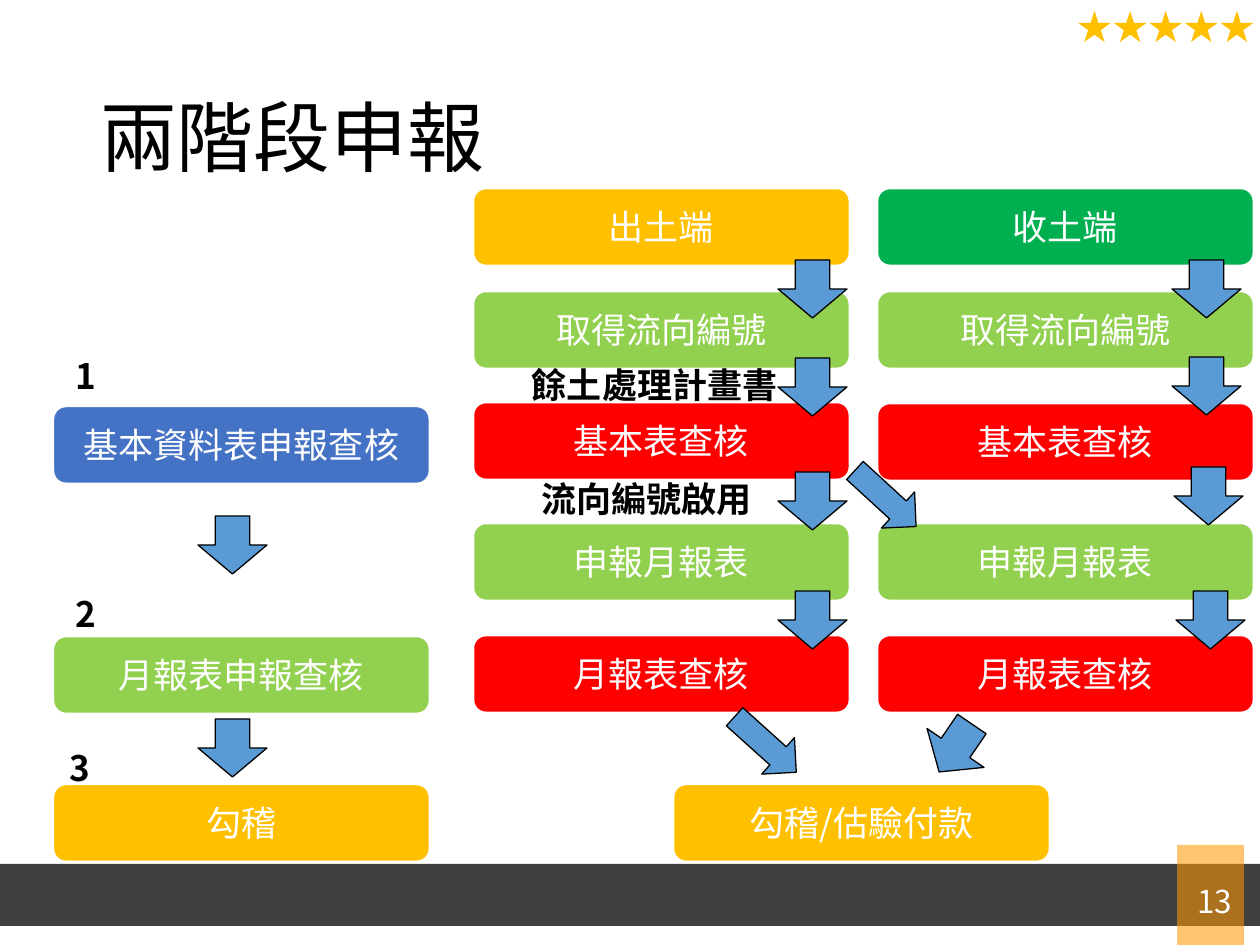
"""Build the slide on two-stage reporting as a flow of boxes and arrows."""
from lxml import etree
from pptx import Presentation
from pptx.dml.color import RGBColor
from pptx.enum.shapes import MSO_SHAPE
from pptx.enum.text import MSO_ANCHOR, MSO_AUTO_SIZE, PP_ALIGN
from pptx.oxml.ns import qn
from pptx.util import Pt

RECT, ROUND = MSO_SHAPE.RECTANGLE, MSO_SHAPE.ROUNDED_RECTANGLE
DOWN, STAR = MSO_SHAPE.DOWN_ARROW, MSO_SHAPE.STAR_5_POINT
LEFT, MID, RIGHT = PP_ALIGN.LEFT, PP_ALIGN.CENTER, PP_ALIGN.RIGHT
CENTER, TOP = MSO_ANCHOR.MIDDLE, MSO_ANCHOR.TOP
FIXED, GROW = MSO_AUTO_SIZE.NONE, MSO_AUTO_SIZE.SHAPE_TO_FIT_TEXT

WHITE = RGBColor(0xFF, 0xFF, 0xFF)
BLACK = RGBColor(0x00, 0x00, 0x00)
GRAY = RGBColor(0x40, 0x40, 0x40)
ORANGE = RGBColor(0xFF, 0x99, 0x00)
BLUE = RGBColor(0x44, 0x72, 0xC4)
SKY = RGBColor(0x5B, 0x9B, 0xD5)
LIME = RGBColor(0x92, 0xD0, 0x50)
GREEN = RGBColor(0x00, 0xB0, 0x50)
GOLD = RGBColor(0xFF, 0xC0, 0x00)
RED = RGBColor(0xFF, 0x00, 0x00)

FONT = "Noto Sans CJK JP"
SCALE = 914400 / 126
BOX = (377, 78)
ARROW = (69, 58)
SLANT = (49, 83)

TITLE = "兩階段申報"
PAGE = "13"
STEPS = [("取得流向編號", LIME), ("基本表查核", RED),
         ("申報月報表", LIME), ("月報表查核", RED)]
FLOWS = [
    (53, [406, 636, 784], [("基本資料表申報查核", BLUE),
                           ("月報表申報查核", LIME), ("勾稽", GOLD)]),
    (473, [188, 291, 402, 523, 635], [("出土端", GOLD)] + STEPS),
    (877, [188, 291, 403, 523, 635], [("收土端", GREEN)] + STEPS),
    (673, [784], [("勾稽/估驗付款", GOLD)]),
]
LABELS = [
    ("1", 62, 348, 69), ("2", 62, 586, 69), ("3", 57, 740, 69),
    ("流向編號啟用", 528, 471, 585), ("餘土處理計畫書", 519, 357, 347),
]
ARROWS = [
    (198, 516), (198, 719),
    (778, 260), (778, 358), (778, 472), (778, 591),
    (1172, 260), (1172, 357), (1174, 467), (1176, 591),
]
TURNED = [
    ((741, 703) + SLANT, 312), ((861, 457) + SLANT, 312.5),
    ((921, 719) + ARROW, 34.3),
]


def emu(*nums):
    return [round(num * SCALE) for num in nums]


def write(shape, text, size=20, color=BLACK, bold=False, align=LEFT,
          anchor=TOP, fit=FIXED, inset=(13, 6), space=None):
    frame = shape.text_frame
    frame.word_wrap = True
    frame.auto_size = fit
    frame.vertical_anchor = anchor
    frame.margin_left, frame.margin_top = emu(*inset)
    frame.margin_right, frame.margin_bottom = emu(*inset)
    para = frame.paragraphs[0]
    para.alignment = align
    para.line_spacing = space
    run = para.add_run()
    run.text = text
    font = run.font
    font.size, font.bold, font.name = Pt(size), bold, FONT
    font.color.rgb = color
    props = run._r.get_or_add_rPr()
    etree.SubElement(props, qn("a:ea")).set("typeface", FONT)


def draw(slide, kind, area, fill, line=None, width=1.5, turn=0):
    shape = slide.shapes.add_shape(kind, *emu(*area))
    shape.shadow.inherit = False
    shape.fill.solid()
    shape.fill.fore_color.rgb = fill
    if line is None:
        shape.line.fill.background()
    else:
        shape.line.color.rgb = line
        shape.line.width = Pt(width)
    shape.rotation = turn
    return shape


def label(slide, text, area, **style):
    write(slide.shapes.add_textbox(*emu(*area)), text, **style)


def main():
    deck = Presentation()
    deck.slide_width, deck.slide_height = emu(1260, 945)
    slide = deck.slides.add_slide(deck.slide_layouts[5])

    title = slide.shapes.title
    title.left, title.top, title.width, title.height = emu(87, 50, 1086, 183)
    write(title, TITLE, size=44, anchor=CENTER, space=0.9)

    draw(slide, RECT, (0, 864, 1260, 62), GRAY)
    tab = draw(slide, RECT, (1177, 845, 67, 102), ORANGE)
    tint = tab._element.spPr.find(".//" + qn("a:srgbClr"))
    etree.SubElement(tint, qn("a:alpha")).set("val", "56000")
    label(slide, PAGE, (1147, 876, 98, 50), size=18, color=WHITE,
          align=RIGHT, anchor=CENTER)

    for left, tops, items in FLOWS:
        for top, (text, fill) in zip(tops, items):
            box = draw(slide, ROUND, (left, top) + BOX, fill, WHITE)
            write(box, text, color=WHITE, align=MID, anchor=CENTER,
                  inset=(9, 5))

    for text, left, top, width in LABELS:
        label(slide, text, (left, top, width, 55), bold=True, fit=GROW)

    for area, turn in [(spot + ARROW, 0) for spot in ARROWS] + TURNED:
        draw(slide, DOWN, area, SKY, BLACK, 0.75, turn)

    for step in range(5):
        draw(slide, STAR, (1078 + step * 35.6, 11, 33, 31), GOLD)

    deck.save("out.pptx")


if __name__ == "__main__":
    main()
